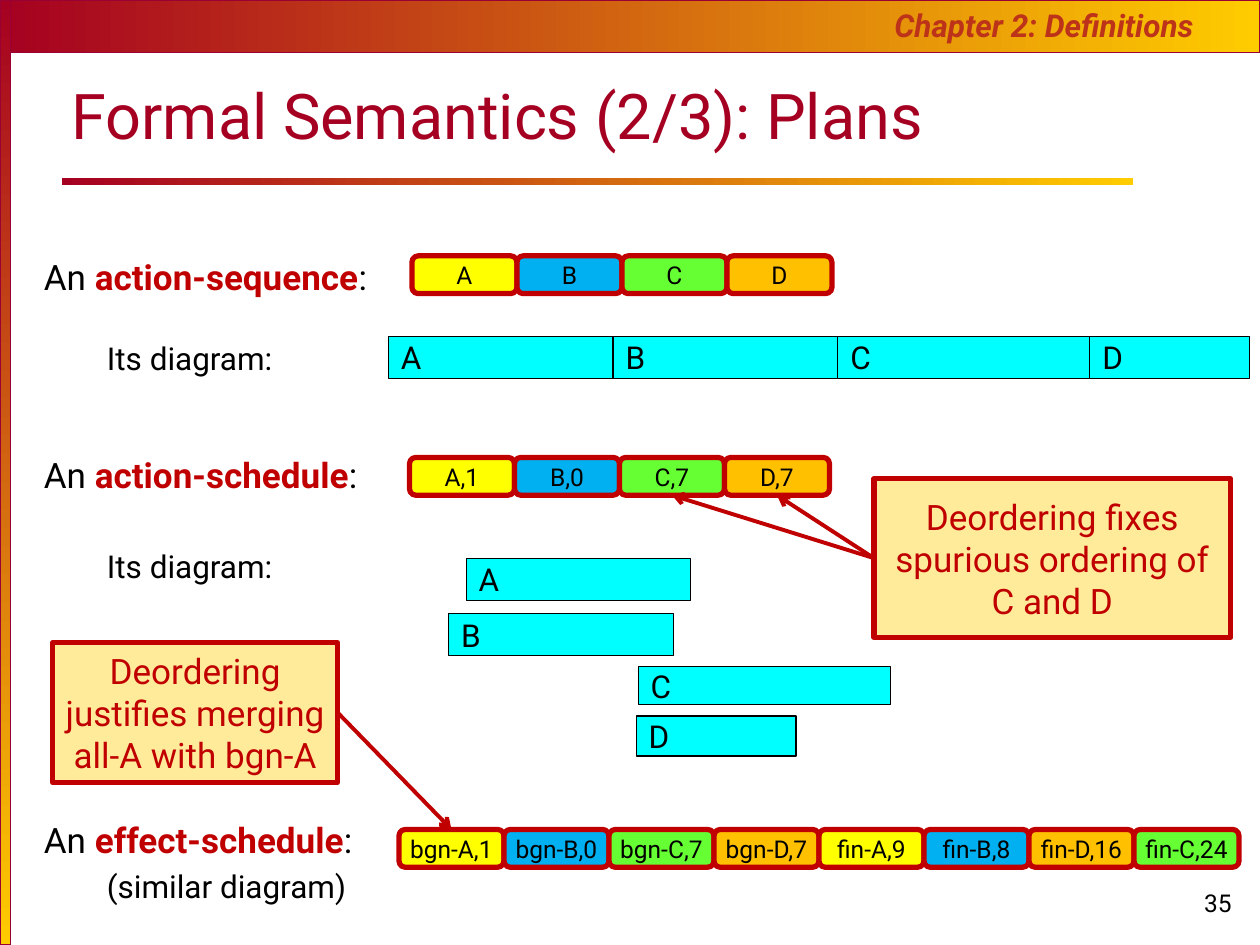
from itertools import accumulate

from lxml import etree
from pptx import Presentation
from pptx.dml.color import RGBColor
from pptx.enum import shapes, text
from pptx.oxml import ns
from pptx.util import Pt

FONT = "Roboto"
BLACK = RGBColor(0x00, 0x00, 0x00)
CRIMSON = RGBColor(0xA5, 0x00, 0x21)
GOLD = RGBColor(0xFF, 0xCC, 0x00)
EDGE = RGBColor(0x99, 0x00, 0x33)
RUST = RGBColor(0xBC, 0x33, 0x19)
RED = RGBColor(0xC0, 0x00, 0x00)
CREAM = RGBColor(0xFF, 0xEB, 0x99)
CYAN = RGBColor(0x00, 0xFF, 0xFF)
ACTION_COLORS = {
    "A": RGBColor(0xFF, 0xFF, 0x00),
    "B": RGBColor(0x00, 0xB0, 0xF0),
    "C": RGBColor(0x66, 0xFF, 0x33),
    "D": RGBColor(0xFF, 0xC0, 0x00),
}
DURATIONS = {"A": 128.4, "B": 128.4, "C": 144, "D": 91.4}
PILL_WIDTH, PILL_HEIGHT = 60, 21.6
RECTANGLE = shapes.MSO_SHAPE.RECTANGLE
ROUNDED = shapes.MSO_SHAPE.ROUNDED_RECTANGLE
LEFT, CENTER = text.PP_ALIGN.LEFT, text.PP_ALIGN.CENTER
TOP, BOTTOM, RIGHT = 0, 2, 3


def style_font(font, size, color):
    font.name = FONT
    font.size = Pt(size)
    font.color.rgb = color


def add_text(page, box, words, size, color, align=LEFT, anchor=text.MSO_ANCHOR.TOP):
    frame = page.shapes.add_textbox(*map(Pt, box)).text_frame
    frame.word_wrap = True
    frame.vertical_anchor = anchor
    para = frame.paragraphs[0]
    para.text = words
    para.alignment = align
    style_font(para.font, size, color)
    return para


def add_block(page, box, kind, words, fill, line, width, size, color=BLACK, align=CENTER):
    block = page.shapes.add_shape(kind, *map(Pt, box))
    block.shadow.inherit = False
    block.fill.solid()
    block.fill.fore_color.rgb = fill
    block.line.color.rgb = line
    block.line.width = Pt(width)
    frame = block.text_frame
    frame.word_wrap = kind != ROUNDED
    frame.vertical_anchor = text.MSO_ANCHOR.MIDDLE
    para = frame.paragraphs[0]
    para.text = words
    para.alignment = align
    style_font(para.font, size, color)
    return block


def add_gradient_bar(page, box, angle, outlined=True):
    bar = page.shapes.add_shape(RECTANGLE, *map(Pt, box))
    bar.shadow.inherit = False
    bar.fill.gradient()
    bar.fill.gradient_angle = angle
    for stop, color, position in zip(bar.fill.gradient_stops, (CRIMSON, GOLD), (0, 1)):
        stop.color.rgb = color
        stop.position = position
    if outlined:
        bar.line.color.rgb = EDGE
        bar.line.width = Pt(0.75)
    else:
        bar.line.fill.background()


def add_frame(page, width, height):
    add_gradient_bar(page, (0, 0, width, 30), 0)
    add_gradient_bar(page, (0, 0, 6, height), 270)
    add_gradient_bar(page, (35.2, 101.8, 612, 3.8), 0, outlined=False)
    chapter = add_text(page, (504, 0, 214.6, 29), "Chapter 2: Definitions", 18, RUST)
    chapter.font.bold = chapter.font.italic = True
    add_text(page, (33.8, 36.7, 613.4, 54), "Formal Semantics (2/3): Plans", 36, CRIMSON,
             anchor=text.MSO_ANCHOR.BOTTOM)
    add_text(page, (width - 48, height - 36, 48, 36), "35", 14, BLACK, CENTER)


def add_outline(page, box):
    entries = [
        ("action-sequence", True, 0),
        ("Its diagram:", False, 23.6),
        ("action-schedule", True, 43.9),
        ("Its diagram:", False, 29.3),
        ("effect-schedule", True, 133.6),
        ("(similar diagram)", False, 3.6),
    ]
    frame = page.shapes.add_textbox(*map(Pt, box)).text_frame
    frame.word_wrap = True
    for index, (words, is_term, gap) in enumerate(entries):
        para = frame.add_paragraph() if index else frame.paragraphs[0]
        para.space_before = Pt(gap)
        if is_term:
            for part in ("An ", words, ":"):
                span = para.add_run()
                span.text = part
                span.font.bold = part == words
                style_font(span.font, 20, RED if part == words else BLACK)
        else:
            para.text = words
            para.level = 1
            properties = para._p.get_or_add_pPr()
            properties.set("marL", str(Pt(36)))
            properties.set("indent", "0")
            style_font(para.font, 18, BLACK)


def add_pills(page, left, top, labels):
    pills = {}
    for index, label in enumerate(labels):
        action = label.split(",")[0][-1]
        box = (left + index * PILL_WIDTH, top, PILL_WIDTH, PILL_HEIGHT)
        pills[label] = add_block(page, box, ROUNDED, label, ACTION_COLORS[action], RED, 3, 14)
    return pills


def add_duration(page, action, left, top, height):
    box = (left, top, DURATIONS[action], height)
    add_block(page, box, RECTANGLE, action, CYAN, BLACK, 0.75, 18, align=LEFT)


def add_sequence_diagram(page, left, top):
    starts = accumulate(DURATIONS.values(), initial=left)
    for action, start in zip(DURATIONS, starts):
        add_duration(page, action, start, top, 24)


def add_schedule_diagram(page, left, top):
    rows = [("A", 10, 0, 24), ("B", 0, 31.7, 24), ("C", 108.4, 62, 21.6), ("D", 107.2, 90.2, 22.8)]
    for action, start, drop, height in rows:
        add_duration(page, action, left + start, top + drop, height)


def add_arrow(page, source, source_side, target, target_side):
    arrow = page.shapes.add_connector(shapes.MSO_CONNECTOR.STRAIGHT, 0, 0, 0, 0)
    arrow.begin_connect(source, source_side)
    arrow.end_connect(target, target_side)
    arrow.line.color.rgb = RED
    arrow.line.width = Pt(2.25)
    etree.SubElement(arrow.line._get_or_add_ln(), ns.qn("a:tailEnd"), type="arrow")
    etree.SubElement(arrow._element.spPr, ns.qn("a:effectLst"))


def add_callout(page, box, words, side, targets, target_side):
    callout = add_block(page, box, RECTANGLE, words, CREAM, RED, 3, 20, RED)
    for target in targets:
        add_arrow(page, callout, side, target, target_side)


def main():
    deck = Presentation()
    deck.slide_width, deck.slide_height = Pt(720), Pt(540)
    page = deck.slides.add_slide(deck.slide_layouts[6])
    add_frame(page, 720, 540)
    add_outline(page, (18, 142.4, 300, 386))
    effects = add_pills(page, 228, 474, ["bgn-A,1", "bgn-B,0", "bgn-C,7", "bgn-D,7",
                                         "fin-A,9", "fin-B,8", "fin-D,16", "fin-C,24"])
    add_schedule_diagram(page, 256.4, 319)
    schedule = add_pills(page, 234, 261.4, ["A,1", "B,0", "C,7", "D,7"])
    add_pills(page, 235.4, 146.2, ["A", "B", "C", "D"])
    add_sequence_diagram(page, 222, 192.2)
    add_callout(page, (499.4, 273.6, 203.8, 90.7),
                "Deordering fixes spurious ordering of C and D",
                1, [schedule["C,7"], schedule["D,7"]], BOTTOM)
    add_callout(page, (30.2, 367.2, 162.7, 79.9),
                "Deordering justifies merging all-A with bgn-A",
                RIGHT, [effects["bgn-A,1"]], TOP)
    deck.save("out.pptx")


if __name__ == "__main__":
    main()
